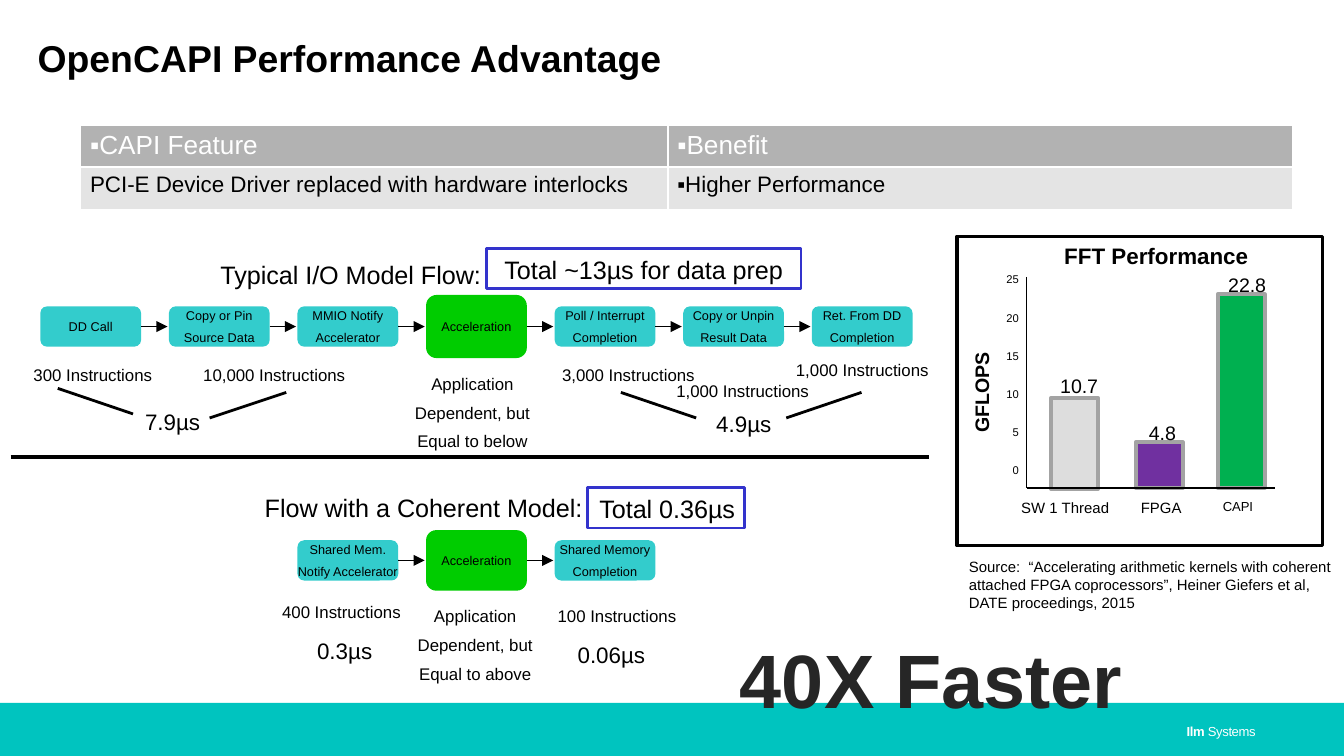
from pptx import Presentation, util as u
from pptx.dml.color import RGBColor
from pptx.enum import shapes, text
from pptx.oxml.ns import qn
from lxml import etree

colour = RGBColor.from_string
TIGHT, NORMAL = (0.07, 0.04), (0.1, 0.05)
LEFT, CENTRE, RIGHT = text.PP_ALIGN.LEFT, text.PP_ALIGN.CENTER, text.PP_ALIGN.RIGHT
RECT, ROUNDED = shapes.MSO_SHAPE.RECTANGLE, shapes.MSO_SHAPE.ROUNDED_RECTANGLE

deck = Presentation()
deck.slide_width = u.Inches(10)
deck.slide_height = u.Inches(10 * 9 / 16)
page = deck.slides.add_slide(deck.slide_layouts[6])


def write(words, size, place=None, box=None, align=LEFT, margins=TIGHT, gap=0.5,
          ink="000000", bold=False, **frame_format):
    """Fill a box, or a new text box at the given place, one paragraph per line."""
    if box is None:
        box = page.shapes.add_textbox(*map(u.Inches, place))
    frame = box.text_frame
    side, end = map(u.Inches, margins)
    values = {"margin_left": side, "margin_right": side, "margin_top": end,
              "margin_bottom": end, "word_wrap": False,
              "auto_size": text.MSO_AUTO_SIZE.SHAPE_TO_FIT_TEXT,
              "vertical_anchor": text.MSO_ANCHOR.TOP, **frame_format}
    for name, value in values.items():
        setattr(frame, name, value)
    for i, line in enumerate(words.split("\n")):
        para = frame.add_paragraph() if i else frame.paragraphs[0]
        para.alignment = align
        para.space_before = u.Pt(size * gap if i else 0)
        span = para.add_run()
        span.text = line
        for name, value in {"name": "Arial", "size": u.Pt(size), "bold": bold}.items():
            setattr(span.font, name, value)
        span.font.color.rgb = colour(ink)
    return box


def draw_line(x1, y1, x2, y2, width, arrow=False):
    line = page.shapes.add_connector(shapes.MSO_CONNECTOR.STRAIGHT,
                                     *map(u.Inches, (x1, y1, x2, y2)))
    line.line.color.rgb = colour("000000")
    line.line.width = u.Pt(width)
    if arrow:
        etree.SubElement(line.line._get_or_add_ln(), qn("a:tailEnd"), type="triangle")
    etree.SubElement(line._element.spPr, qn("a:effectLst"))


# Footer band
band_top = u.Inches(5.23)
band = page.shapes.add_shape(RECT, 0, band_top, deck.slide_width, deck.slide_height - band_top)
band.shadow.inherit = False
band.fill.solid()
band.fill.fore_color.rgb = colour("00C4BF")
band.line.fill.background()
footer = write("Ilm ", 7, (8.83, 5.38, 0.6, 0.12), margins=(0, 0), ink="FFFFFF",
               bold=True, vertical_anchor=text.MSO_ANCHOR.MIDDLE)
span = footer.text_frame.paragraphs[0].add_run()
span.text = "Systems"
span.font.name, span.font.size, span.font.bold = "Arial", u.Pt(7), False
span.font.color.rgb = colour("FFFFFF")
for span in footer.text_frame.paragraphs[0].runs:
    span.font._element.set("spc", "-20")

# Title
title = write("OpenCAPI Performance Advantage", 20, (0.28, 0.3, 9.72, 0.3),
              margins=(0, 0), bold=True, word_wrap=True)
title.text_frame.paragraphs[0].line_spacing = 0.9

# Feature table
table = page.shapes.add_table(2, 2, *map(u.Inches, (0.6, 0.93, 9.02, 0.63))).table
for column, width in zip(table.columns, (4.37, 4.65)):
    column.width = u.Inches(width)
table_rows = [
    (0.31, 14, "FFFFFF", "B2B2B2", ("▪CAPI Feature", "▪Benefit")),
    (0.32, 12, "000000", "E4E4E4",
     ("PCI-E Device Driver replaced with hardware interlocks", "▪Higher Performance")),
]
for row, (height, size, ink, fill, words) in zip(table.rows, table_rows):
    row.height = u.Inches(height)
    for cell, label in zip(row.cells, words):
        cell.margin_left = cell.margin_right = u.Inches(0.07)
        cell.margin_top = cell.margin_bottom = u.Inches(0.04)
        para = cell.text_frame.paragraphs[0]
        if label.startswith("▪"):
            properties = para._p.get_or_add_pPr()
            properties.set("marL", "0")
            properties.set("indent", "0")
            etree.SubElement(properties, qn("a:buFont"), typeface="Arial")
            etree.SubElement(properties, qn("a:buChar"), char="▪")
        span = para.add_run()
        span.text = label.lstrip("▪")
        for name, value in {"name": "Arial", "size": u.Pt(size), "bold": False}.items():
            setattr(span.font, name, value)
        span.font.color.rgb = colour(ink)
        borders = cell._tc.get_or_add_tcPr()
        for side in ("a:lnL", "a:lnR", "a:lnT", "a:lnB"):
            border = etree.SubElement(borders, qn(side), w=str(u.Pt(1)))
            paint = etree.SubElement(border, qn("a:solidFill"))
            etree.SubElement(paint, qn("a:srgbClr"), val="FFFFFF")
        cell.fill.solid()
        cell.fill.fore_color.rgb = colour(fill)

# Flow steps and arrows: (first column, middle height, accelerator height, steps)
STEP, STEP_WIDTH = 5.74 / 6, 0.75
flows = [
    (0, 2.43, 0.47, ("DD Call", "Copy or Pin\nSource Data", "MMIO Notify\nAccelerator",
                     "Acceleration", "Poll / Interrupt\nCompletion",
                     "Copy or Unpin\nResult Data", "Ret. From DD\nCompletion")),
    (2, 4.17, 0.45, ("Shared Mem.\nNotify Accelerator", "Acceleration",
                     "Shared Memory\nCompletion")),
]
for first, middle, tall, steps in flows:
    for column, label in enumerate(steps, first):
        left = 0.3 + column * STEP
        accelerator = label == "Acceleration"
        height = tall if accelerator else 0.3
        box = page.shapes.add_shape(ROUNDED, *map(u.Inches, (
            left, middle - height / 2, STEP_WIDTH, height)))
        box.shadow.inherit = False
        box.fill.solid()
        box.fill.fore_color.rgb = colour("00CC00" if accelerator else "33CCCC")
        box.line.fill.background()
        write(label, 6.8, box=box, align=CENTRE, auto_size=text.MSO_AUTO_SIZE.NONE,
              vertical_anchor=text.MSO_ANCHOR.MIDDLE)
        if column > first:
            draw_line(left - STEP + STEP_WIDTH, middle, left - 0.01, middle, 0.75, arrow=True)

# Flow headings and framed totals
write("Typical I/O Model Flow:", 13.5, (1.57, 1.89, 2.26, 0.3))
write("Flow with a Coherent Model:", 13.5, (1.9, 3.62, 2.64, 0.3))
for words, place, align in [
    ("Total ~13µs for data prep", (3.62, 1.85, 2.34, 0.3), CENTRE),
    ("Total 0.36µs", (4.37, 3.63, 1.17, 0.3), RIGHT),
]:
    box = page.shapes.add_shape(RECT, *map(u.Inches, place))
    box.shadow.inherit = False
    box.fill.background()
    box.line.color.rgb = colour("3333CC")
    box.line.width = u.Pt(1.5)
    write(words, 13.5, box=box, align=align)

# Instruction counts and times
for words, size, *place in [
    ("300 Instructions", 9, 0.17, 2.67, 1.04, 0.23),
    ("10,000 Instructions", 9, 1.43, 2.67, 1.22, 0.23),
    ("3,000 Instructions", 9, 4.1, 2.67, 1.15, 0.23),
    ("1,000 Instructions", 9, 4.95, 2.79, 1.15, 0.23),
    ("1,000 Instructions", 9, 5.84, 2.64, 1.15, 0.23),
    ("400 Instructions", 9, 2.02, 4.44, 1.04, 0.23),
    ("100 Instructions", 9, 4.07, 4.47, 1.04, 0.23),
    ("7.9µs", 12, 1, 3, 0.57, 0.28),
    ("4.9µs", 12, 5.25, 3.01, 0.57, 0.28),
    ("0.3µs", 12, 2.28, 4.7, 0.57, 0.28),
    ("0.06µs", 12, 4.22, 4.73, 0.66, 0.28),
    ("Application\nDependent, but\nEqual to below", 9, 3.01, 2.74, 1.01, 0.68),
    ("Application\nDependent, but\nEqual to above", 9, 3.03, 4.47, 1.01, 0.68),
]:
    write(words, size, place, align=CENTRE)

# Lines joining counts to times, and the divider
for start, top, end in [(0.43, 2.89, 0.99), (2.13, 2.92, 1.56),
                        (4.62, 2.92, 5.18), (6.41, 2.92, 5.85)]:
    draw_line(start, top, end, top + 0.19, 1.5)
draw_line(0.08, 3.4, 6.91, 3.4, 2.25)

# Headline result
write("40X Faster", 40.5, (5.42, 4.67, 3.02, 0.76), align=CENTRE, ink="262626", bold=True)

# FFT panel and bars, which the slide draws by hand
for fill, edge, *place in [
    (None, "000000", 7.12, 1.76, 2.72, 2.3),
    ("DDDDDD", "A3A3A3", 7.82, 2.96, 0.35, 0.68),
    ("7030A0", "A3A3A3", 8.45, 3.29, 0.35, 0.34),
    ("00B050", "A3A3A3", 9.06, 2.19, 0.35, 1.44),
]:
    box = page.shapes.add_shape(RECT, *map(u.Inches, place))
    box.shadow.inherit = False
    if fill:
        box.fill.solid()
        box.fill.fore_color.rgb = colour(fill)
    else:
        box.fill.background()
    box.line.color.rgb = colour(edge)
    box.line.width = u.Pt(2)

# FFT axes and labels
draw_line(7.64, 2.06, 7.64, 3.63, 0.75)
draw_line(7.64, 3.63, 9.49, 3.63, 0.75)
write("25\n20\n15\n10\n5\n0", 6, (7.38, 1.98, 0.3, 1.72), align=RIGHT,
      margins=NORMAL, gap=2.2)
for words, size, *place in [
    ("10.7", 10.5, 7.79, 2.73, 0.49, 0.28),
    ("4.8", 10.5, 8.45, 3.08, 0.41, 0.28),
    ("22.8", 10.5, 9.04, 1.98, 0.49, 0.28),
    ("SW 1 Thread", 8, 7.5, 3.66, 0.87, 0.24),
    ("FPGA", 8, 8.39, 3.66, 0.51, 0.24),
    ("CAPI", 7, 9, 3.66, 0.43, 0.22),
]:
    write(words, size, place, margins=NORMAL)
write("FFT Performance", 12, (7.82, 1.75, 1.59, 0.3), margins=NORMAL, bold=True)
axis_title = write("GFLOPS", 10.5, (6.9, 2.77, 0.81, 0.28), margins=NORMAL, bold=True)
axis_title.rotation = 270

# Source
write("Source:  “Accelerating arithmetic kernels with coherent attached FPGA coprocessors”, "
      "Heiner Giefers et al, DATE proceedings, 2015", 8, (7.11, 4.1, 2.91, 0.5),
      margins=NORMAL, word_wrap=True)

deck.save("out.pptx")
